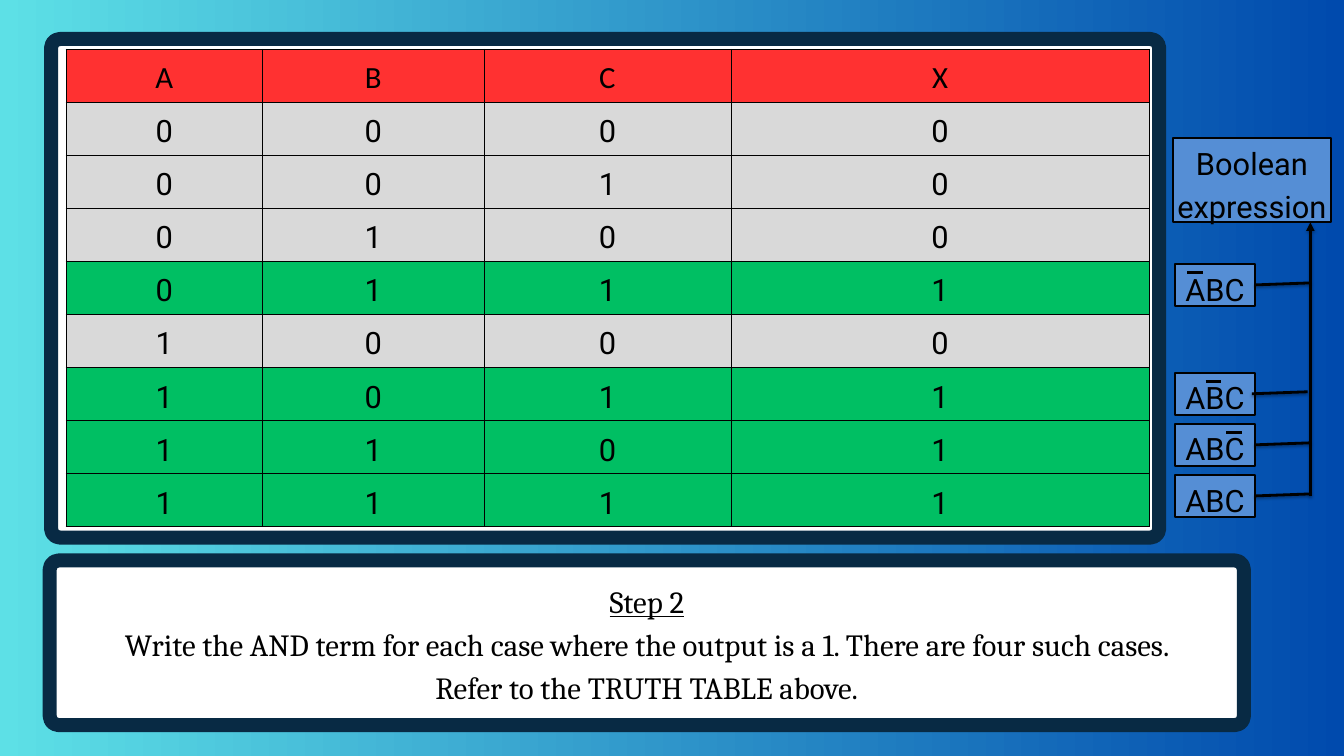
from lxml import etree
from pptx import Presentation
from pptx.dml.color import RGBColor
from pptx.enum.shapes import MSO_CONNECTOR, MSO_SHAPE
from pptx.enum.text import MSO_ANCHOR, MSO_AUTO_SIZE, PP_ALIGN
from pptx.oxml import parse_xml
from pptx.oxml.ns import nsdecls, qn
from pptx.util import Inches, Pt

RECTANGLE, ROUNDED = MSO_SHAPE.RECTANGLE, MSO_SHAPE.ROUNDED_RECTANGLE
STRAIGHT = MSO_CONNECTOR.STRAIGHT
TOP, MIDDLE, CENTER = MSO_ANCHOR.TOP, MSO_ANCHOR.MIDDLE, PP_ALIGN.CENTER
FIT_SHAPE = MSO_AUTO_SIZE.SHAPE_TO_FIT_TEXT

BLACK = RGBColor(0x00, 0x00, 0x00)
WHITE = RGBColor(0xFF, 0xFF, 0xFF)
NAVY = RGBColor(0x08, 0x2A, 0x44)
BLUE = RGBColor(0x55, 0x8E, 0xD5)
RED = RGBColor(0xFF, 0x31, 0x31)
GREY = RGBColor(0xD9, 0xD9, 0xD9)
GREEN = RGBColor(0x00, 0xBF, 0x63)
GRADIENT = (RGBColor(0x5D, 0xE0, 0xE6), RGBColor(0x00, 0x4A, 0xAD))

SHADOW = (
    f'<a:effectLst {nsdecls("a")}><a:outerShdw blurRad="{Pt(3.1)}" dist="{Pt(1.8)}" '
    'dir="5400000" rotWithShape="0"><a:srgbClr val="000000"><a:alpha val="35000"/>'
    '</a:srgbClr></a:outerShdw></a:effectLst>'
)
NO_SHADOW = f'<a:effectLst {nsdecls("a")}/>'


def write_text(frame, text, font="Roboto", underlined_lines=()):
    """Write centred paragraphs, one for each line of the text."""
    for index, line in enumerate(text.split("\n")):
        paragraph = frame.paragraphs[0] if index == 0 else frame.add_paragraph()
        paragraph.alignment = CENTER
        paragraph.line_spacing = Pt(46.2)
        run = paragraph.add_run()
        run.text = line
        run.font.name = font
        run.font.size = Pt(33)
        run.font.color.rgb = BLACK
        if index in underlined_lines:
            run.font.underline = True


class SlideBuilder:
    """Holds the slide and draws each kind of element in its style."""

    def __init__(self, slide):
        self.slide = slide
        self.shapes = slide.shapes

    def background(self, colors):
        fill = self.slide.background.fill
        fill.gradient()
        fill.gradient_angle = 0
        for stop, color in zip(fill.gradient_stops, colors):
            stop.color.rgb = color

    def box(self, kind, left, top, width, height, fill, line, line_width):
        shape = self.shapes.add_shape(
            kind, Inches(left), Inches(top), Inches(width), Inches(height))
        shape.shadow.inherit = False
        shape.fill.solid()
        shape.fill.fore_color.rgb = fill
        shape.line.color.rgb = line
        shape.line.width = Pt(line_width)
        return shape

    def panel(self, left, top, width, height):
        shape = self.box(ROUNDED, left, top, width, height, WHITE, NAVY, 15)
        shape.adjustments[0] = 0.13 / height

    def fit_text(self, shape, text, **text_format):
        frame = shape.text_frame
        frame.margin_left = frame.margin_right = 0
        frame.margin_top = frame.margin_bottom = 0
        frame.vertical_anchor = TOP
        frame.word_wrap = True
        write_text(frame, text, **text_format)
        frame.auto_size = FIT_SHAPE

    def label(self, text, left, top, width, height):
        self.fit_text(self.box(RECTANGLE, left, top, width, height, BLUE, BLACK, 2), text)

    def textbox(self, text, left, top, width, height, **text_format):
        shape = self.shapes.add_textbox(
            Inches(left), Inches(top), Inches(width), Inches(height))
        self.fit_text(shape, text, **text_format)

    def line(self, start, end, shadow=True, arrow=False):
        connector = self.shapes.add_connector(
            STRAIGHT, *(Inches(value) for value in (*start, *end)))
        connector.line.color.rgb = BLACK
        connector.line.width = Pt(3)
        if arrow:
            line = connector.line._get_or_add_ln()
            etree.SubElement(line, qn("a:tailEnd"), type="triangle")
        connector._element.spPr.append(parse_xml(SHADOW if shadow else NO_SHADOW))

    def table(self, rows, left, top, column_widths, row_height):
        table = self.shapes.add_table(
            len(rows), len(column_widths), Inches(left), Inches(top),
            Inches(sum(column_widths)), Inches(row_height * len(rows))).table
        table.first_row = table.horz_banding = False
        for column, width in zip(table.columns, column_widths):
            column.width = Inches(width)
        for row_index, values in enumerate(rows):
            table.rows[row_index].height = Inches(row_height)
            if row_index == 0:
                color, font = RED, "Calibri"
            else:
                color, font = (GREEN if values[-1] == "1" else GREY), "Roboto"
            for column_index, value in enumerate(values):
                self.cell(table.cell(row_index, column_index), value, color, font)

    def cell(self, cell, text, color, font):
        cell.margin_left = cell.margin_right = Inches(0.06)
        cell.margin_top = cell.margin_bottom = Inches(0.06)
        cell.vertical_anchor = MIDDLE
        properties = cell._tc.get_or_add_tcPr()
        for side in "LRTB":
            properties.append(parse_xml(
                f'<a:ln{side} {nsdecls("a")} w="{Pt(0.75)}"><a:solidFill>'
                f'<a:srgbClr val="{BLACK}"/></a:solidFill></a:ln{side}>'))
        cell.fill.solid()
        cell.fill.fore_color.rgb = color
        write_text(cell.text_frame, text, font=font)


def main():
    presentation = Presentation()
    presentation.slide_width = Inches(20)
    presentation.slide_height = Inches(11.25)
    builder = SlideBuilder(presentation.slides.add_slide(presentation.slide_layouts[6]))
    builder.background(GRADIENT)

    # Truth table, with the outputs for 000 to 111
    builder.panel(0.76, 0.58, 16.49, 7.42)
    outputs = "00010111"
    rows = ["ABCX"] + [f"{number:03b}{output}" for number, output in enumerate(outputs)]
    builder.table(rows, 0.98, 0.73, (2.93, 3.29, 3.68, 6.22), 0.79)

    # Explanation
    builder.panel(0.74, 8.34, 17.77, 2.45)
    builder.textbox(
        "Step 2\nWrite the AND term for each case where the output is a 1. "
        "There are four such cases. Refer to the TRUTH TABLE above.",
        1.45, 8.58, 16.35, 1.9, font="Cambria", underlined_lines=(0,))

    # AND terms beside their table rows
    term_tops = (3.93, 5.55, 6.31, 7.07)
    for top in term_tops:
        builder.label("ABC", 17.49, top, 1.18, 0.62)
    builder.label("Boolean expression", 17.45, 2.06, 2.36, 1.25)

    # Bars over the negated inputs
    for left, top in zip((17.67, 17.94, 18.25), term_tops):
        builder.line((left, top + 0.13), (left + 0.23, top + 0.13), shadow=False)

    # Lines from the terms to the expression
    builder.line((19.5, 7.38), (19.5, 3.31), arrow=True)
    for top in term_tops:
        left = 18.63 if top == 5.55 else 18.67
        builder.line((left, top + 0.31), (left + 0.83, top + 0.28))

    presentation.save("out.pptx")


if __name__ == "__main__":
    main()
